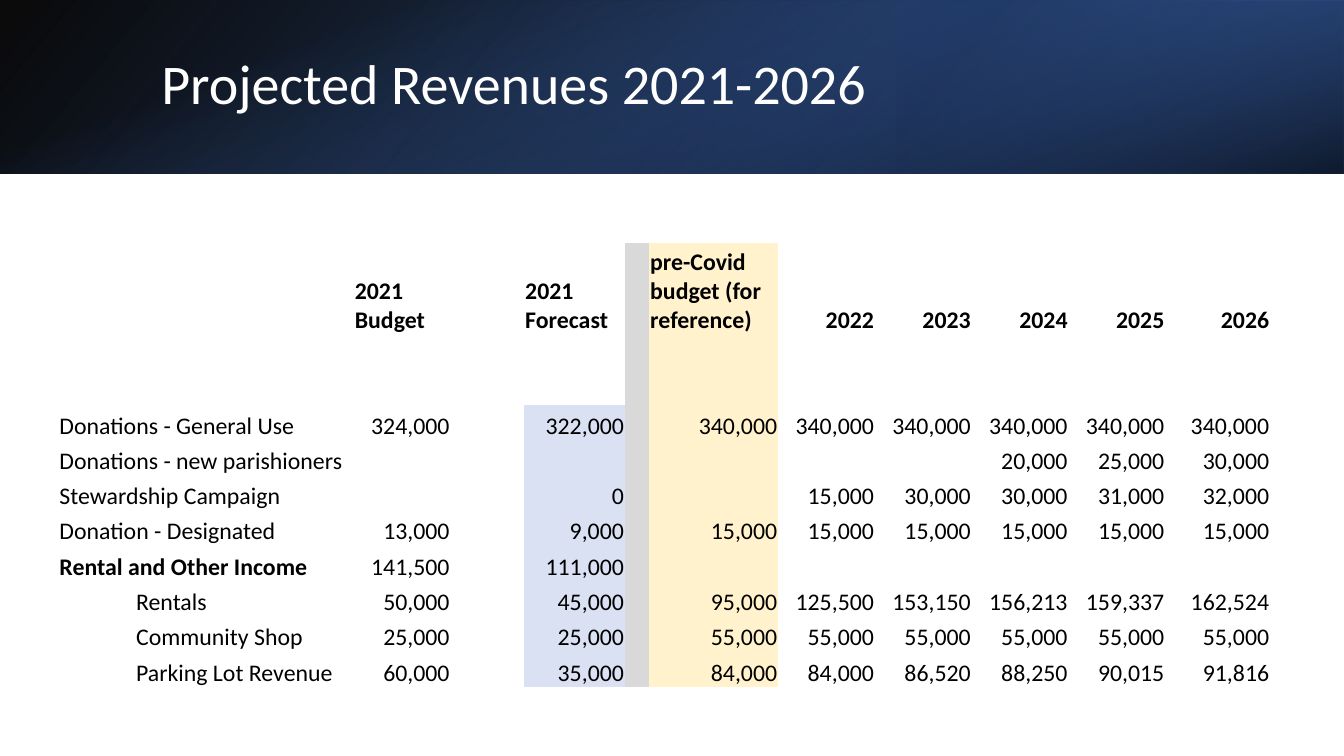
from pptx import Presentation
from pptx.dml.color import RGBColor
from pptx.enum import shapes, text
from pptx.oxml import ns
from pptx.util import Inches, Pt
from lxml import etree

THEME = {
    "font": "Calibri", "title": 40, "body": 17,
    "white": "FFFFFF", "ink": "000000", "navy": "203864",
    "deep": "2F5597", "blue": "4472C4",
    "grey": "D9D9D9", "cream": "FFF2CC", "pale": "D9E1F2",
}


def color(name):
    return RGBColor.from_string(THEME[name])


def style(font, size, ink, bold=False):
    look = {"name": THEME["font"], "size": Pt(THEME[size]), "bold": bold}
    for key, value in look.items():
        setattr(font, key, value)
    font.color.rgb = color(ink)


deck = Presentation()
deck.slide_width, deck.slide_height = Inches(13.33), Inches(7.5)
slide = deck.slides.add_slide(deck.slide_layouts[5])

# Banner: three layered gradients (box, turn, flip, angle, stops)
bands = [
    ((0, 0, 13.33, 1.72), 0, True, 140,
     [(0, "ink", 96), (1, "deep", 100)]),
    ((8.89, 0, 4.44, 1.72), 180, True, 320,
     [(0.19, "navy", 68), (1, "blue", 79)]),
    ((5.8, -5.8, 1.72, 13.33), 90, False, 340,
     [(0.23, "blue", 0), (0.99, "ink", 74)]),
]
# Stops are (position, colour, opacity in percent)
for box, turn, flip, angle, stops in bands:
    band = slide.shapes.add_shape(
        shapes.MSO_SHAPE.RECTANGLE, *[Inches(v) for v in box])
    band.shadow.inherit = False
    band.line.fill.background()
    band.rotation = turn
    if flip:
        band._element.spPr.xfrm.set("flipH", "1")
    band.fill.gradient()
    band.fill.gradient_angle = 360 - angle
    for stop, (place, name, solid) in zip(band.fill.gradient_stops, stops):
        stop.position = place
        stop.color.rgb = color(name)
    marks = band._element.spPr.iter(ns.qn("a:srgbClr"))
    for mark, (place, name, solid) in zip(list(marks), stops):
        alpha = etree.SubElement(mark, ns.qn("a:alpha"))
        alpha.set("val", str(solid * 1000))

# Title, raised above the banner
title = slide.shapes.title
slide.shapes._spTree.append(title._element)
spot = {"left": 1.5, "top": 0.38, "width": 10.98, "height": 0.96}
for key, value in spot.items():
    setattr(title, key, Inches(value))
frame = title.text_frame
frame.text = "Projected Revenues 2021-2026"
frame.auto_size = text.MSO_AUTO_SIZE.NONE
frame.vertical_anchor = text.MSO_ANCHOR.MIDDLE
line = frame.paragraphs[0]
line.alignment = text.PP_ALIGN.LEFT
line.line_spacing = 0.9
style(line.runs[0].font, "title", "white")

# Table content: label, sub-label, 2021 figures, spacer, plan years
rows = [
    "||2021 Budget||2021 Forecast||pre-Covid budget (for reference)"
    "|2022|2023|2024|2025|2026",
    "|||||||||||",
    "|||||||||||",
    "Donations - General Use||324,000||322,000||340,000"
    "|340,000|340,000|340,000|340,000|340,000",
    "Donations - new parishioners|||||||||20,000|25,000|30,000",
    "Stewardship Campaign||||0|||15,000|30,000|30,000|31,000|32,000",
    "Donation - Designated||13,000||9,000||15,000"
    "|15,000|15,000|15,000|15,000|15,000",
    "Rental and Other Income||141,500||111,000|||||||",
    "|Rentals|50,000||45,000||95,000"
    "|125,500|153,150|156,213|159,337|162,524",
    "|Community Shop|25,000||25,000||55,000"
    "|55,000|55,000|55,000|55,000|55,000",
    "|Parking Lot Revenue|60,000||35,000||84,000"
    "|84,000|86,520|88,250|90,015|91,816",
]
wide = [0.76, 2.17, 0.96, 0.73, 1, 0.24, 1.28] + [0.96] * 4 + [1.04]
high = [0.91] + [0.35] * (len(rows) - 1)

# Table grid, free of any banded style
grid = slide.shapes.add_table(
    len(rows), len(wide), Inches(0.58), Inches(2.41),
    Inches(sum(wide)), Inches(sum(high))).table
grid.first_row = grid.horz_banding = False
grid._tbl.tblPr.find(ns.qn("a:tableStyleId")).text = (
    "{2D5ABB26-0587-4C30-8999-92F81FD0307C}")
for col, size in zip(grid.columns, wide):
    col.width = Inches(size)
for row, size in zip(grid.rows, high):
    row.height = Inches(size)

# Cells: tints by column, figures to the right
trim = {
    "margin_left": Inches(0.01), "margin_right": Inches(0.01),
    "margin_top": Inches(0.01), "margin_bottom": 0,
    "vertical_anchor": text.MSO_ANCHOR.BOTTOM,
}
tints = {5: "grey", 6: "cream"}
for r, row in enumerate(rows):
    words = row.split("|")
    if words[0]:
        grid.cell(r, 0).merge(grid.cell(r, 1))
    for c, word in enumerate(words):
        cell = grid.cell(r, c)
        for key, value in trim.items():
            setattr(cell, key, value)
        tint = "pale" if c == 4 and r > 2 else tints.get(c)
        if tint:
            cell.fill.solid()
            cell.fill.fore_color.rgb = color(tint)
        else:
            cell.fill.background()
        if word:
            line = cell.text_frame.paragraphs[0]
            run = line.add_run()
            run.text = word
            right = c > 6 or (c > 1 and r > 0)
            line.alignment = (
                text.PP_ALIGN.RIGHT if right else text.PP_ALIGN.LEFT)
            bold = r == 0 or word == "Rental and Other Income"
            style(run.font, "body", "ink", bold)

deck.save("out.pptx")
